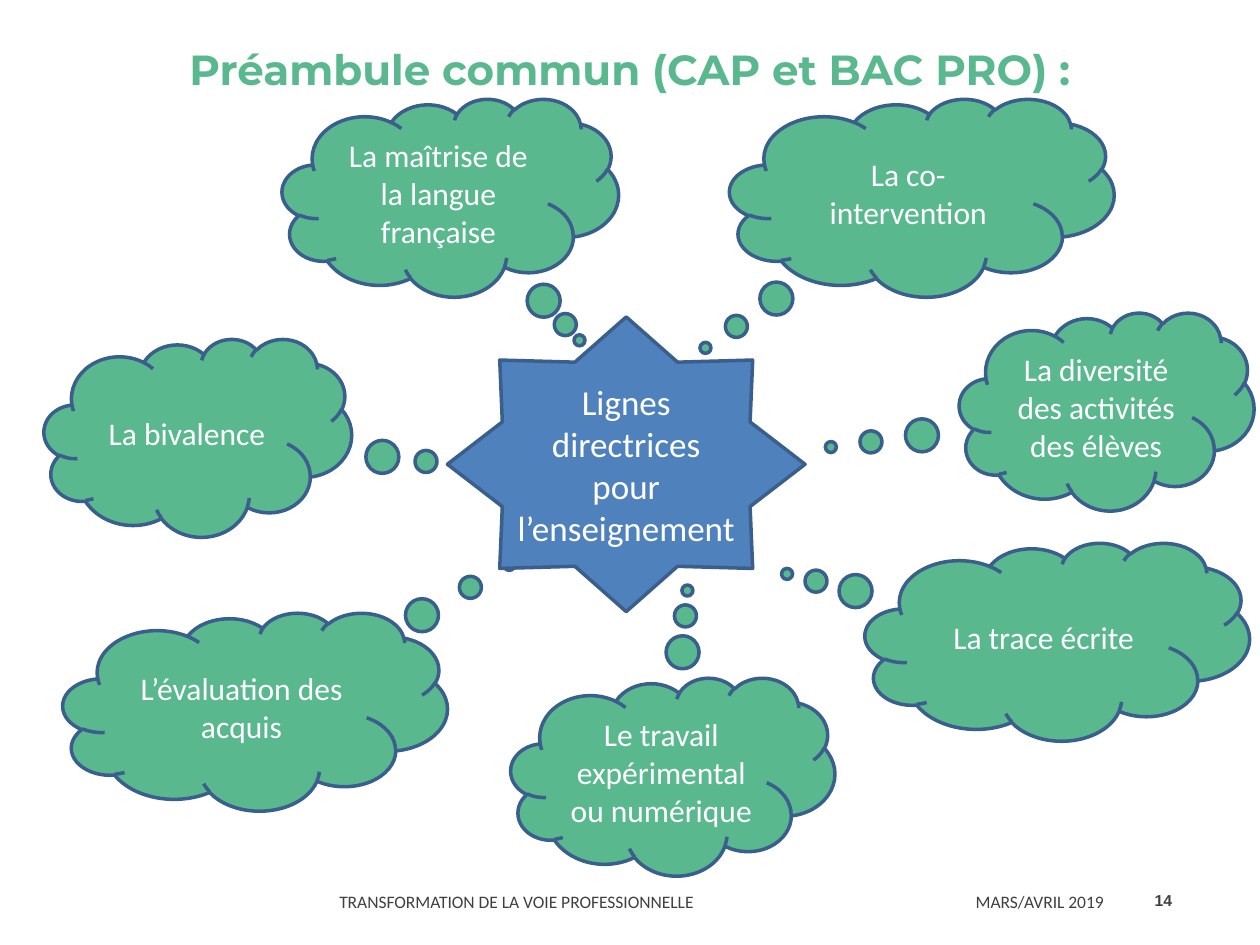
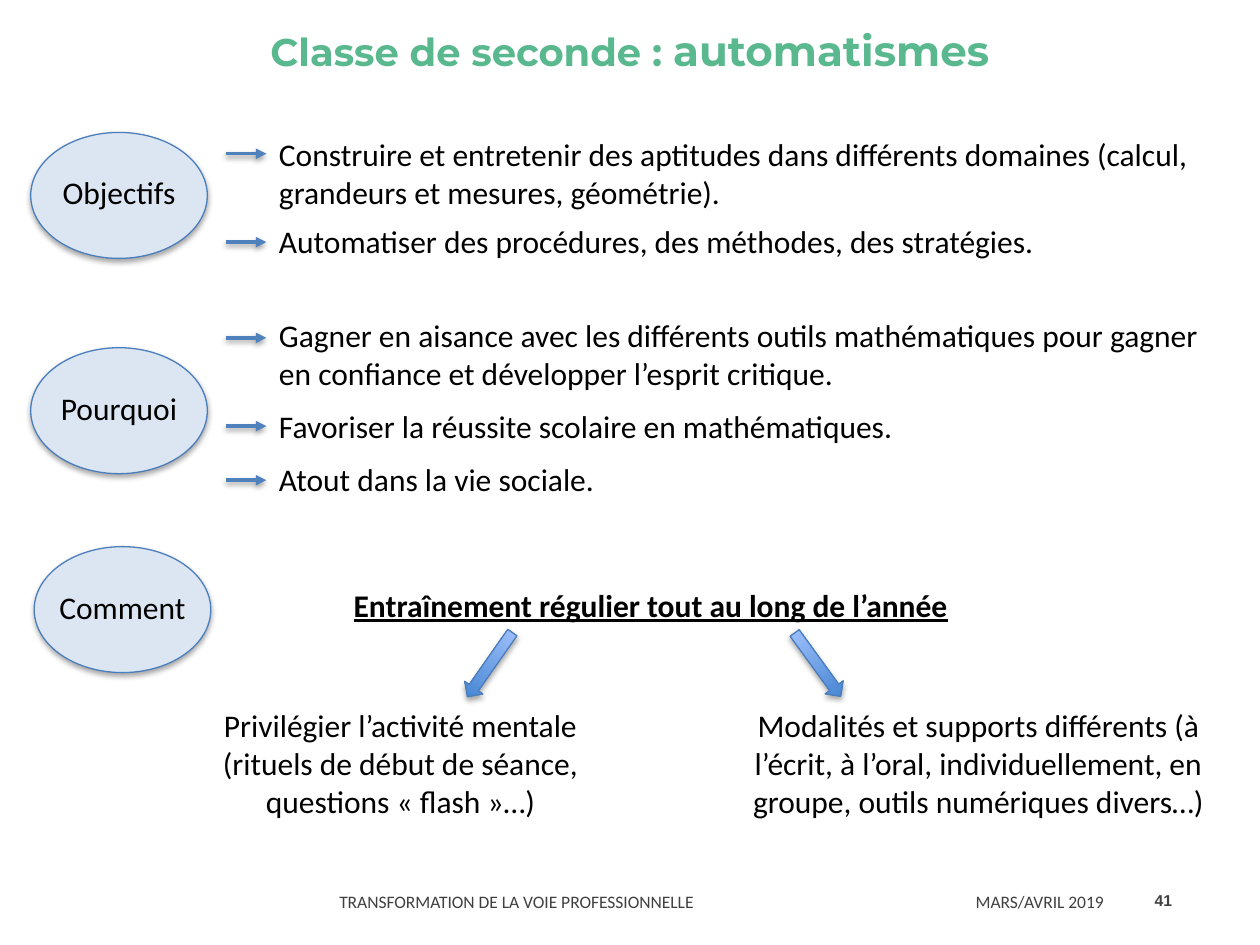
from lxml import etree
from pptx import Presentation
from pptx import util as u
from pptx.dml.color import RGBColor
from pptx.enum import shapes, text
from pptx.oxml.ns import qn

GREEN = RGBColor(0x5A, 0xB8, 0x8F)
BLUE = RGBColor(0x4F, 0x81, 0xBD)
NAVY = RGBColor(0x3A, 0x5F, 0x8C)
EDGE = RGBColor(0x4B, 0x7E, 0xBC)
PALE = RGBColor(0xDC, 0xE6, 0xF2)
DEEP = RGBColor(0x3F, 0x80, 0xCE)
SKY = RGBColor(0xA4, 0xC4, 0xFF)
GREY = RGBColor(0x40, 0x40, 0x40)
BLACK = RGBColor(0, 0, 0)
WHITE = RGBColor(255, 255, 255)

LEFT, MID, RIGHT = text.PP_ALIGN.LEFT, text.PP_ALIGN.CENTER, text.PP_ALIGN.RIGHT
KIND = shapes.MSO_SHAPE


def cm(*sizes):
    return [u.Cm(size) for size in sizes]


def style(font, size, ink, face="Calibri", bold=False):
    font.size, font.name, font.bold = u.Pt(size), face, bold
    font.color.rgb = ink


def write(frame, lines, size=18, ink=BLACK, align=LEFT, gap=0, **look):
    frame.word_wrap = True
    frame.auto_size = text.MSO_AUTO_SIZE.NONE
    frame.text = "\n".join(lines)
    for row, para in enumerate(frame.paragraphs):
        para.alignment = align
        para.space_before = u.Pt(gap if row else 0)
        for run in para.runs:
            style(run.font, size, ink, **look)


def note(slide, box, lines, **look):
    frame = slide.shapes.add_textbox(*cm(*box)).text_frame
    write(frame, lines, **look)
    return frame


def move(shape, box):
    shape.left, shape.top, shape.width, shape.height = cm(*box)


def shade(shape, dist, alpha):
    props = shape.element.spPr
    glow = props.find(qn("a:effectLst"))
    if glow is None:
        glow = etree.SubElement(props, qn("a:effectLst"))
    cast = etree.SubElement(glow, qn("a:outerShdw"), blurRad="40000",
                            dist=str(dist), dir="5400000", rotWithShape="0")
    tint = etree.SubElement(cast, qn("a:srgbClr"), val="000000")
    etree.SubElement(tint, qn("a:alpha"), val=str(alpha * 1000))


def draw(slide, kind, box, fill, edge, width):
    shape = slide.shapes.add_shape(kind, *cm(*box))
    shape.shadow.inherit = False
    if fill:
        shape.fill.solid()
        shape.fill.fore_color.rgb = fill
    shape.line.color.rgb = edge
    shape.line.width = u.Pt(width)
    return shape


def head(slide, box, parts):
    title = slide.shapes.title
    move(title, box)
    frame = title.text_frame
    frame.auto_size = text.MSO_AUTO_SIZE.NONE
    frame.vertical_anchor = text.MSO_ANCHOR.MIDDLE
    para = frame.paragraphs[0]
    para.alignment = MID
    for words, size in parts:
        run = para.add_run()
        run.text = words
        style(run.font, size, GREEN, "Montserrat", True)


def foot(slide, box, page):
    x, y, w, h = box
    for dx, wide, words in ((0, 12.83, "TRANSFORMATION DE LA VOIE PROFESSIONNELLE"),
                            (12.83, 3.23, "MARS/AVRIL 2019")):
        frame = note(slide, (x + dx, y, wide, h), [words], size=10, ink=GREY)
        frame.vertical_anchor = text.MSO_ANCHOR.MIDDLE
        frame.paragraphs[0].line_spacing = u.Pt(13.2)
    frame = note(slide, (x + w - 1.24, y, 1.24, h), [page], size=9, ink=GREY,
                 align=RIGHT, face="Arial", bold=True)
    frame.vertical_anchor = text.MSO_ANCHOR.MIDDLE


def start(deck, layout, top, parts, page):
    slide = deck.slides.add_slide(deck.slide_layouts.get_by_name(layout))
    head(slide, (0.62, top, 24.15, 2), parts)
    foot(slide, (6.59, 17.63, 17.29, 1.04), page)
    return slide


def cloud(slide, box, words, tip):
    shape = draw(slide, KIND.CLOUD_CALLOUT, box, GREEN, NAVY, 2)
    shape.adjustments[0], shape.adjustments[1] = tip
    write(shape.text_frame, [words], ink=WHITE, align=MID)


def star(slide, box, words):
    shape = draw(slide, KIND.STAR_8_POINT, box, BLUE, NAVY, 2)
    write(shape.text_frame, [words], size=20, ink=WHITE, align=MID)


def oval(slide, x, y, label):
    shape = draw(slide, KIND.OVAL, (x, y, 3.56, 2.54), PALE, EDGE, 0.75)
    shade(shape, 23000, 35)
    frame = shape.text_frame
    frame.margin_left = frame.margin_right = frame.margin_top = 0
    write(frame, [label], align=MID)
    frame.word_wrap = False


def arrow(slide, x, y):
    line = slide.shapes.add_connector(shapes.MSO_CONNECTOR.STRAIGHT,
                                      *cm(x, y, x + 0.81, y))
    line.line.color.rgb = BLUE
    line.line.width = u.Pt(2)
    etree.SubElement(line.element.spPr.find(qn("a:ln")), qn("a:tailEnd"),
                     type="triangle")
    shade(line, 20000, 38)


def topic(slide, box, label, body, items, gap, drops):
    x, y, w, h = box
    oval(slide, x, y + (h - 2.54) / 2, label)
    move(body, (x + 4.75, y, w - 4.75, h))
    frame = body.text_frame
    frame.text = "\n".join(items)
    for row, para in enumerate(frame.paragraphs):
        props = para._p.get_or_add_pPr()
        props.set("marL", "0")
        props.set("indent", "0")
        etree.SubElement(props, qn("a:buNone"))
        para.space_before = u.Pt(gap if row else 0)
        for run in para.runs:
            style(run.font, 18, BLACK)
    frame.auto_size = text.MSO_AUTO_SIZE.NONE
    for drop in drops:
        arrow(slide, x + 3.94, y + drop)


def branch(slide, box, dx, turn, lines):
    x, y, w, h = box
    shape = draw(slide, KIND.DOWN_ARROW, (x + dx, y, 0.45, 1.58), None, EDGE, 0.75)
    shape.rotation = turn
    shape.fill.gradient()
    shape.fill.gradient_angle = 90
    for stop, ink in zip(shape.fill.gradient_stops, (DEEP, SKY)):
        stop.color.rgb = ink
    shade(shape, 23000, 35)
    note(slide, (x, y + 1.5, w, h - 1.5), lines, align=MID)


def method(slide, box, label, goal, ways):
    x, y, w, h = box
    oval(slide, x, y, label)
    frame = note(slide, (x + 6.19, y + 0.66, 12.93, 1.02), [goal], bold=True)
    frame.paragraphs[0].runs[0].font.underline = True
    for left, wide, dx, turn, lines in ways:
        branch(slide, (x + left, y + 1.59, wide, h - 1.59), dx, turn, lines)


def preamble(deck):
    slide = start(deck, "Title Only", 0.38,
                  [("Préambule commun (CAP et BAC PRO) :", 24)], "14")
    clouds = [
        (0.89, 6.83, 6.2, "La bivalence", (0.848, 0.137)),
        (5.69, 1.99, 6.78, "La maîtrise de la langue française", (0.384, 0.721)),
        (14.71, 1.99, 7.75, "La co-intervention", (-0.563, 0.759)),
        (19.34, 6.3, 5.94, "La diversité des activités des élèves", (-0.936, 0.18)),
        (17.44, 10.94, 7.75, "La trace écrite", (-0.703, -0.342)),
        (10.3, 13.66, 6.53, "Le travail expérimental ou numérique", (0.045, -0.94)),
        (1.27, 12.35, 7.75, "L’évaluation des acquis", (0.661, -0.741)),
    ]
    for x, y, wide, words, tip in clouds:
        cloud(slide, (x, y, wide, 3.99), words, tip)
    star(slide, (9.02, 6.39, 7.21, 5.94), "Lignes directrices pour l’enseignement")


def second(deck):
    slide = start(deck, "Two Content", 0,
                  [("Classe de seconde : ", 22), ("automatismes", 24)], "41")
    goals, whys = slide.placeholders[1], slide.placeholders[2]
    topic(slide, (0.62, 2.59, 24.6, 2.7), "Objectifs", goals, [
        "Construire et entretenir des aptitudes dans différents domaines "
        "(calcul, grandeurs et mesures, géométrie).",
        "Automatiser des procédures, des méthodes, des stratégies.",
    ], 6.5, (0.51, 2.29))
    topic(slide, (0.62, 6.25, 24.35, 4.06), "Pourquoi", whys, [
        "Gagner en aisance avec les différents outils mathématiques pour gagner "
        "en confiance et développer l’esprit critique.",
        "Favoriser la réussite scolaire en mathématiques.",
        "Atout dans la vie sociale.",
    ], 8.5, (0.56, 2.34, 3.43))
    method(slide, (0.69, 11.02, 24.1, 5.65), "Comment",
           "Entraînement régulier tout au long de l’année", [
               (2.51, 9.75, 6.45, 35,
                ["Privilégier l’activité mentale",
                 "(rituels de début de séance, questions « flash »…)"]),
               (13.97, 10.13, 1.6, 324,
                ["Modalités et supports différents (à l’écrit, à l’oral, "
                 "individuellement, en groupe, outils numériques divers…)"]),
           ])


def main():
    deck = Presentation()
    deck.slide_width, deck.slide_height = cm(25.4, 19.05)
    preamble(deck)
    second(deck)
    deck.save("out.pptx")


if __name__ == "__main__":
    main()
